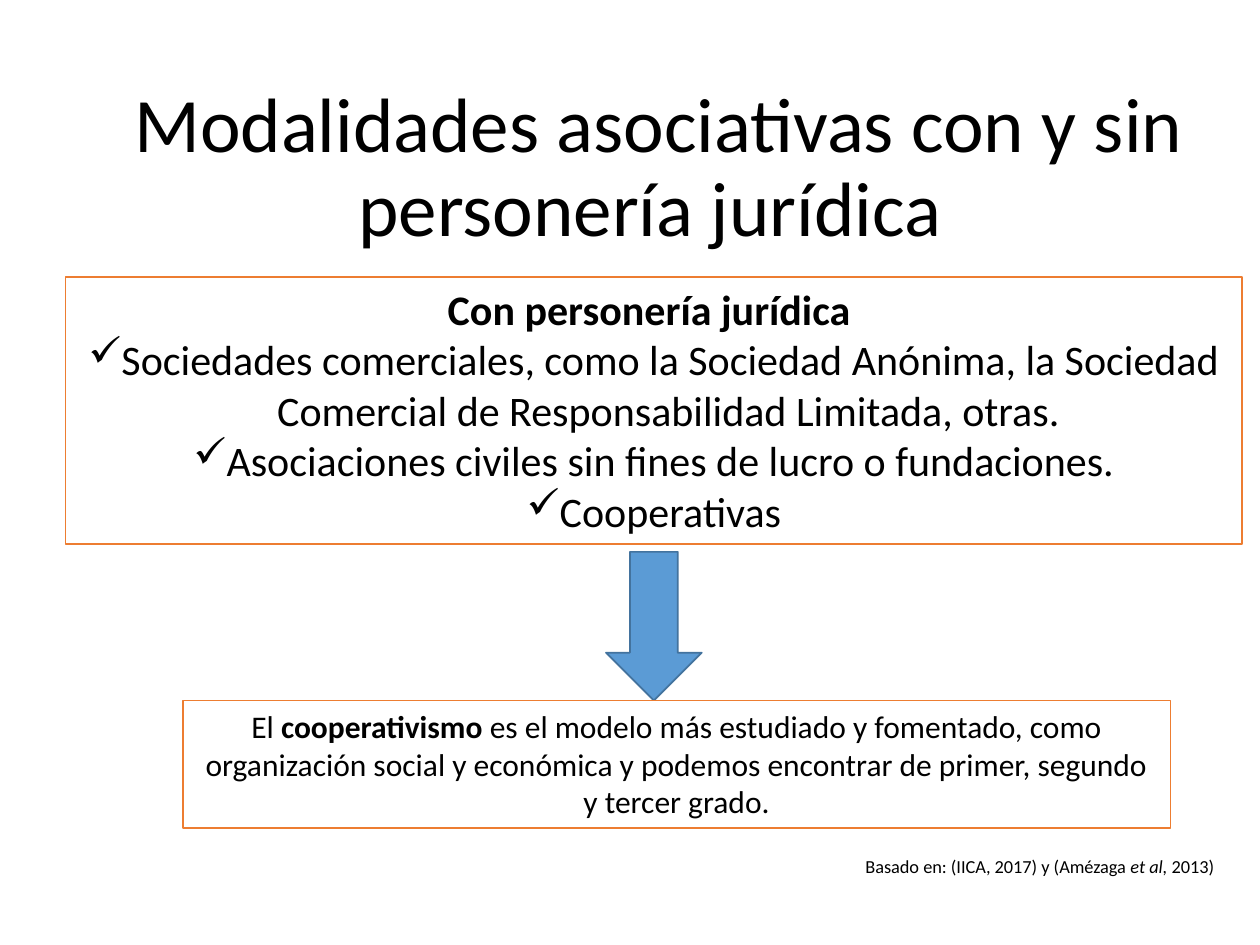
import lxml.etree
import pptx
import pptx.dml.color
import pptx.enum.shapes
import pptx.enum.text
import pptx.oxml.ns
import pptx.util

RGBColor = pptx.dml.color.RGBColor
BLACK = RGBColor(0x00, 0x00, 0x00)
WHITE = RGBColor(0xFF, 0xFF, 0xFF)
ORANGE = RGBColor(0xED, 0x7D, 0x31)
BLUE = RGBColor(0x5B, 0x9B, 0xD5)
DARK_BLUE = RGBColor(0x43, 0x73, 0x9E)

Shape = pptx.enum.shapes.MSO_SHAPE
Align = pptx.enum.text.PP_ALIGN
Anchor = pptx.enum.text.MSO_ANCHOR
Fit = pptx.enum.text.MSO_AUTO_SIZE

COLUMNS, ROWS = 100, 75
INDENT = pptx.util.Inches(0.23)
BOLD, ITALIC = {"bold": True}, {"italic": True}


class SlideBuilder:
    """Draws styled text, boxes and arrows on a grid of 100 columns by 75 rows."""

    def __init__(self, deck):
        self.deck = deck
        self.page = deck.slides.add_slide(deck.slide_layouts[6])
        self.font = {"name": "Calibri"}

    def place(self, left, top, width, height):
        column = self.deck.slide_width / COLUMNS
        row = self.deck.slide_height / ROWS
        return [round(n) for n in (left * column, top * row, width * column, height * row)]

    def fill_text(self, box, paras, size, align, bullets_from=None, spacing=None, **frame):
        text = box.text_frame
        for name, value in {"word_wrap": True, **frame}.items():
            setattr(text, name, value)
        for index, spans in enumerate(paras):
            para = text.paragraphs[0] if index == 0 else text.add_paragraph()
            if bullets_from is not None and index >= bullets_from:
                self.bullet(para)
            para.alignment, para.line_spacing = align, spacing
            for words, extra in spans:
                span = para.add_run()
                span.text = words
                span.font.color.rgb = BLACK
                for name, value in {**self.font, "size": pptx.util.Pt(size), **extra}.items():
                    setattr(span.font, name, value)

    def bullet(self, para):
        properties = para._p.get_or_add_pPr()
        properties.set("marL", str(INDENT))
        properties.set("indent", str(-INDENT))
        mark = lxml.etree.SubElement(properties, pptx.oxml.ns.qn("a:buChar"))
        mark.set("char", "✓")

    def label(self, area, paras, size, align, **style):
        box = self.page.shapes.add_textbox(*self.place(*area))
        self.fill_text(box, paras, size, align, **style)

    def shape(self, kind, area, fill, line):
        box = self.page.shapes.add_shape(kind, *self.place(*area))
        box.shadow.inherit = False
        box.fill.solid()
        box.fill.fore_color.rgb = fill
        box.line.color.rgb = line
        box.line.width = pptx.util.Pt(1)
        return box

    def panel(self, area, paras, size, **style):
        box = self.shape(Shape.RECTANGLE, area, WHITE, ORANGE)
        self.fill_text(box, paras, size, Align.CENTER, vertical_anchor=Anchor.TOP,
                       auto_size=Fit.SHAPE_TO_FIT_TEXT, **style)


def main():
    deck = pptx.Presentation()
    deck.slide_width, deck.slide_height = pptx.util.Inches(10), pptx.util.Inches(7.5)
    slide = SlideBuilder(deck)

    slide.shape(Shape.DOWN_ARROW, (48.1, 43.8, 7.6, 11.8), BLUE, DARK_BLUE)
    slide.label((67.7, 67.4, 32.3, 2.8), [[
        ("Basado en: (IICA, 2017) y (Amézaga ", {}), ("et al, ", ITALIC), ("2013)", {}),
    ]], 10.5, Align.LEFT, auto_size=Fit.SHAPE_TO_FIT_TEXT)
    slide.label((9.2, 6.2, 86.2, 14.5), [[
        ("Modalidades asociativas con y sin personería jurídica ", {}),
    ]], 44, Align.CENTER, spacing=0.9, vertical_anchor=Anchor.MIDDLE)
    slide.panel((5.2, 22, 93.4, 21.2), [
        [("Con personería jurídica ", BOLD)],
        [("Sociedades comerciales, como la Sociedad Anónima, la Sociedad "
          "Comercial de Responsabilidad Limitada, otras.", {})],
        [("Asociaciones civiles sin fines de lucro o fundaciones.", {})],
        [("Cooperativas", {})],
    ], 24, bullets_from=1)
    slide.panel((14.5, 55.6, 78.4, 10.1), [[
        ("El ", {}), ("cooperativismo", BOLD),
        (" es el modelo más estudiado y fomentado, como organización social y económica "
         "y podemos encontrar de primer, segundo y tercer grado.", {}),
    ]], 18)

    deck.save("out.pptx")


if __name__ == "__main__":
    main()
